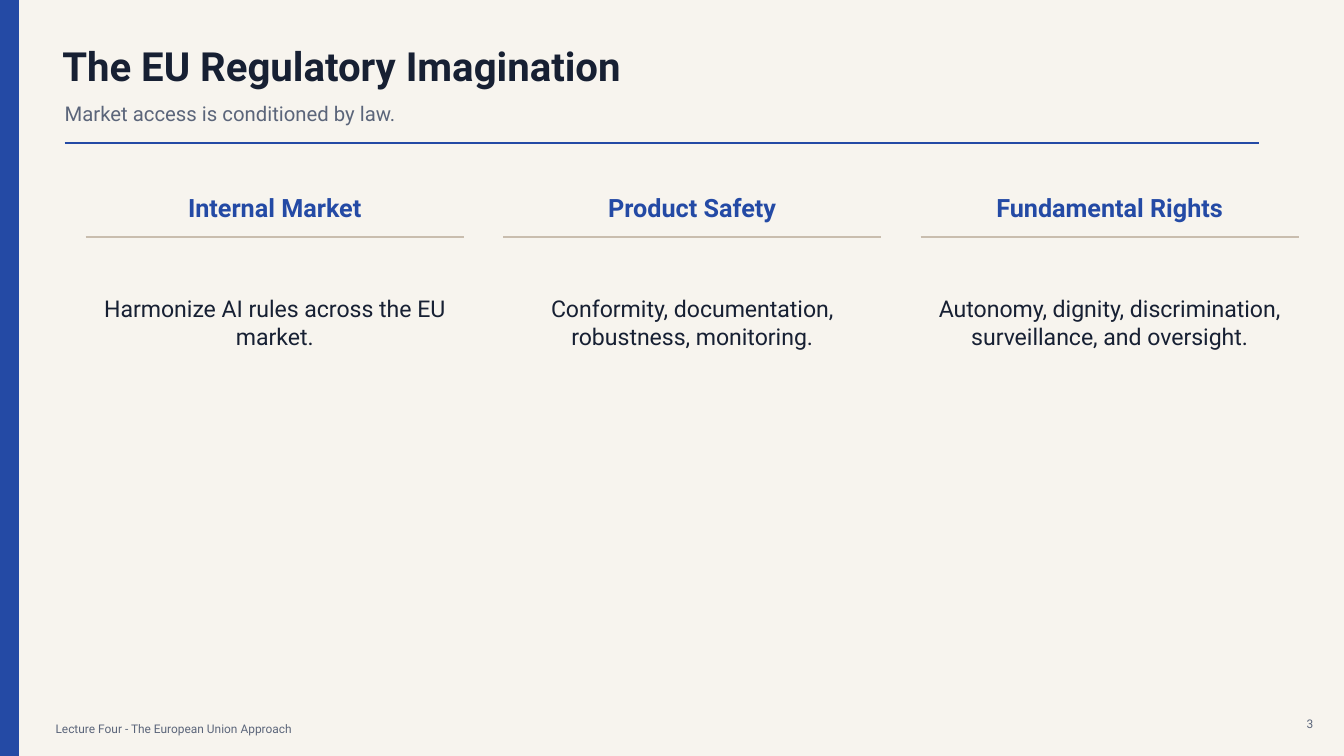
from lxml import etree
from pptx import Presentation
from pptx.dml.color import RGBColor as RGB
from pptx.enum.shapes import MSO_CONNECTOR as CONN, MSO_SHAPE as SHAPE
from pptx.enum.text import MSO_ANCHOR as ANCHOR, PP_ALIGN as ALIGN
from pptx.oxml.ns import qn
from pptx.util import Cm, Pt

COLORS = {"paper": "F7F4EE", "blue": "244AA5", "ink": "172033",
          "muted": "5B657A", "rule": "C9BDAE"}
C = {name: RGB.from_string(value) for name, value in COLORS.items()}

# Text formats
TITLE = {"size": Pt(28.7), "bold": True, "color": "ink"}
SUBTITLE = {"size": Pt(14.5), "color": "muted"}
HEADING = {"size": Pt(18), "bold": True, "color": "blue"}
BODY = {"size": Pt(16.5), "color": "ink"}
FOOTER = {"size": Pt(8.5), "color": "muted"}


def add_text(text, x, y, w, h, fmt, align=ALIGN.LEFT):
    tf = s.shapes.add_textbox(Cm(x), Cm(y), Cm(w), Cm(h)).text_frame
    frame = {"word_wrap": True, "vertical_anchor": ANCHOR.MIDDLE, "margin_left": 0,
             "margin_right": 0, "margin_top": 0, "margin_bottom": 0}
    for key, value in frame.items():
        setattr(tf, key, value)
    p = tf.paragraphs[0]
    p.alignment = align
    r = p.add_run()
    r.text = text
    r.font.name = "Roboto"
    for key, value in fmt.items():
        if key == "color":
            r.font.color.rgb = C[value]
        else:
            setattr(r.font, key, value)


def add_rule(x, y, w, color, weight):
    line = s.shapes.add_connector(CONN.STRAIGHT, Cm(x), Cm(y), Cm(x + w), Cm(y))
    line.line.color.rgb = C[color]
    line.line.width = Pt(weight)
    etree.SubElement(line._element.spPr, qn("a:effectLst"))


prs = Presentation()
prs.slide_width, prs.slide_height = Cm(33.87), Cm(19.05)
s = prs.slides.add_slide(prs.slide_layouts[6])
s.background.fill.solid()
s.background.fill.fore_color.rgb = C["paper"]

# Side bar
bar = s.shapes.add_shape(SHAPE.RECTANGLE, 0, 0, Cm(0.46), prs.slide_height)
bar.shadow.inherit = False
bar.fill.solid()
bar.fill.fore_color.rgb = bar.line.color.rgb = C["blue"]
bar.line.width = Pt(1)

# Footer
add_text("Lecture Four - The European Union Approach", 1.4, 18.11, 22.86, 0.51, FOOTER)
add_text("3", 32.39, 17.98, 0.71, 0.51, FOOTER, ALIGN.RIGHT)

# Header
add_text("The EU Regulatory Imagination", 1.57, 1.07, 24.89, 1.14, TITLE)
add_text("Market access is conditioned by law.", 1.63, 2.41, 27.69, 0.89, SUBTITLE)
add_rule(1.63, 3.61, 30.1, "blue", 1.25)

# Three columns
COLUMNS = [
    ("Internal Market", "Harmonize AI rules across the EU market."),
    ("Product Safety", "Conformity, documentation, robustness, monitoring."),
    ("Fundamental Rights",
     "Autonomy, dignity, discrimination, surveillance, and oversight."),
]
LEFT, STEP, WIDTH = 2.16, 10.52, 9.53
for i, (heading, body) in enumerate(COLUMNS):
    x = LEFT + i * STEP
    add_text(heading, x, 4.83, WIDTH, 0.81, HEADING, ALIGN.CENTER)
    add_rule(x, 5.97, WIDTH, "rule", 1)
    add_text(body, x, 6.73, WIDTH, 2.79, BODY, ALIGN.CENTER)

prs.save("out.pptx")
